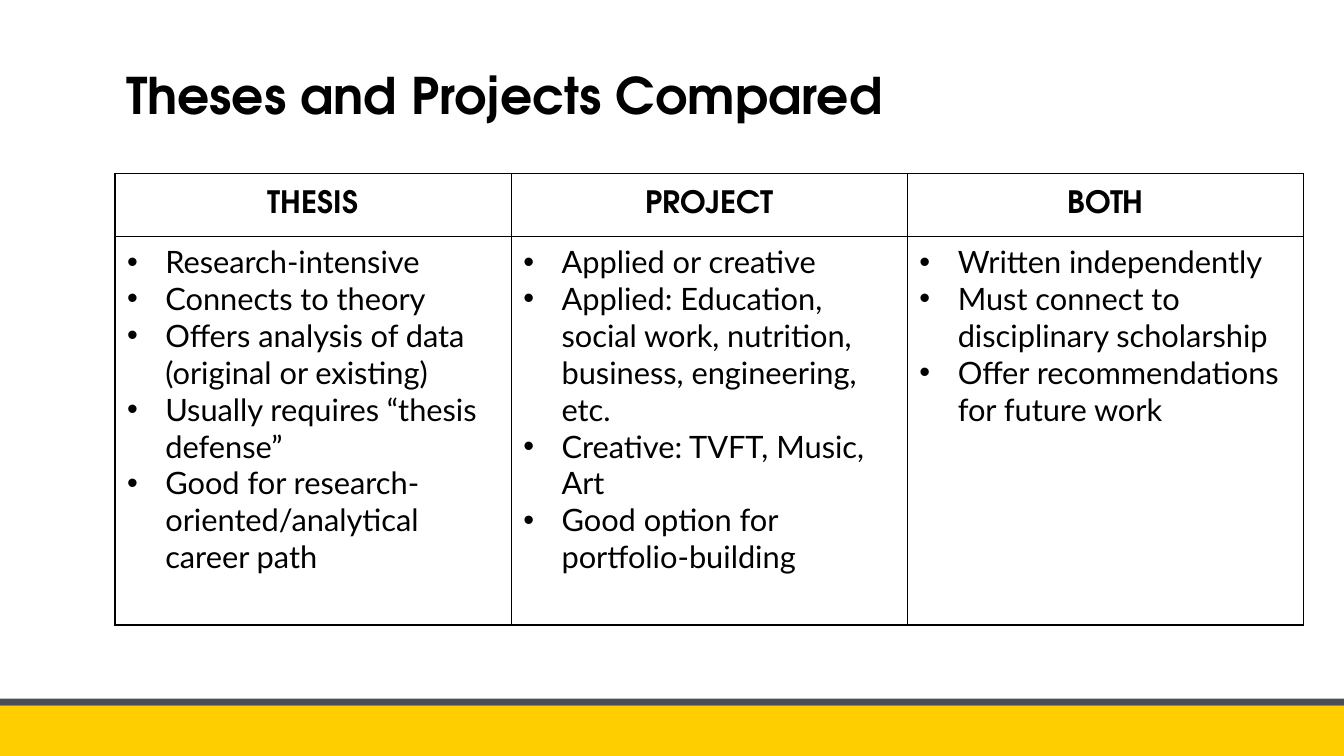
from lxml import etree
from pptx import Presentation
from pptx.dml.color import RGBColor
from pptx.enum.shapes import MSO_SHAPE
from pptx.enum.text import MSO_ANCHOR, PP_ALIGN
from pptx.oxml.ns import qn
from pptx.util import Inches, Pt

RECTANGLE = MSO_SHAPE.RECTANGLE
MIDDLE, TOP = MSO_ANCHOR.MIDDLE, MSO_ANCHOR.TOP
CENTER = PP_ALIGN.CENTER

PAGE_WIDTH, PAGE_HEIGHT = 13.33, 7.5
HEADING_FONT, BODY_FONT = "TeX Gyre Adventor", "Lato"
BLACK, YELLOW, GRAY = "000000", "FFCE00", "4A4F55"
SIDE_INSET, END_INSET = 0.12, 0.06
BULLET_INDENT = 0.38
HEADER_HEIGHT = 0.63

COMPARISON = {
    "THESIS": [
        "Research-intensive",
        "Connects to theory",
        "Offers analysis of data (original or existing)",
        "Usually requires “thesis defense”",
        "Good for research-oriented/analytical career path",
    ],
    "PROJECT": [
        "Applied or creative",
        "Applied: Education, social work, nutrition, business, engineering, etc.",
        "Creative: TVFT, Music, Art",
        "Good option for portfolio-building",
    ],
    "BOTH": [
        "Written independently",
        "Must connect to disciplinary scholarship",
        "Offer recommendations for future work",
    ],
}


def color(hex_value):
    return RGBColor.from_string(hex_value)


def set_insets(holder):
    """Set the margins shared by the title box and the table cells."""
    holder.margin_left = holder.margin_right = Inches(SIDE_INSET)
    holder.margin_top = holder.margin_bottom = Inches(END_INSET)


def style_text(para, font_name, size, bold):
    for span in para.runs:
        span.font.name = font_name
        span.font.size = Pt(size)
        span.font.bold = bold
        span.font.color.rgb = color(BLACK)


def add_bullet(para):
    properties = para._p.get_or_add_pPr()
    properties.set("marL", str(Inches(BULLET_INDENT)))
    properties.set("indent", str(-Inches(BULLET_INDENT)))
    etree.SubElement(properties, qn("a:buFont"), typeface="Arial")
    etree.SubElement(properties, qn("a:buChar"), char="•")


def add_borders(cell):
    properties = cell._tc.get_or_add_tcPr()
    for position, side in enumerate(("lnL", "lnR", "lnT", "lnB")):
        line = etree.Element(qn(f"a:{side}"), w=str(Pt(1)))
        fill = etree.SubElement(line, qn("a:solidFill"))
        etree.SubElement(fill, qn("a:srgbClr"), val=BLACK)
        properties.insert(position, line)


def fill_cell(cell, lines, is_header):
    cell.text_frame.text = "\n".join(lines)
    cell.vertical_anchor = MIDDLE if is_header else TOP
    set_insets(cell)
    cell.fill.background()
    add_borders(cell)
    for para in cell.text_frame.paragraphs:
        if is_header:
            para.alignment = CENTER
        else:
            add_bullet(para)
        style_text(para, HEADING_FONT if is_header else BODY_FONT, 22, is_header)


def add_footer(page, left, top, width, height):
    """Draw a yellow band with a thin gray stripe resting on it."""
    stripe = height / 8
    bands = ((top + stripe, height - stripe, YELLOW), (top, stripe, GRAY))
    for band_top, band_height, band_color in bands:
        band = page.shapes.add_shape(
            RECTANGLE, Inches(left), Inches(band_top), Inches(width), Inches(band_height))
        band.shadow.inherit = False
        band.fill.solid()
        band.fill.fore_color.rgb = color(band_color)
        band.line.fill.background()


def add_title(page, text, left, top, width, height):
    box = page.shapes.add_textbox(Inches(left), Inches(top), Inches(width), Inches(height))
    frame = box.text_frame
    frame.word_wrap = True
    frame.vertical_anchor = MIDDLE
    set_insets(frame)
    frame.text = text
    style_text(frame.paragraphs[0], HEADING_FONT, 36, True)


def add_comparison(page, left, top, width, height):
    table = page.shapes.add_table(
        2, len(COMPARISON), Inches(left), Inches(top), Inches(width), Inches(height)).table
    table.rows[0].height = Inches(HEADER_HEIGHT)
    table.rows[1].height = Inches(height - HEADER_HEIGHT)
    for index, (heading, points) in enumerate(COMPARISON.items()):
        table.columns[index].width = Inches(width / len(COMPARISON))
        fill_cell(table.cell(0, index), [heading], True)
        fill_cell(table.cell(1, index), points, False)


def main():
    deck = Presentation()
    deck.slide_width, deck.slide_height = Inches(PAGE_WIDTH), Inches(PAGE_HEIGHT)
    page = deck.slides.add_slide(deck.slide_layouts[6])
    add_footer(page, 0, 6.93, PAGE_WIDTH, PAGE_HEIGHT - 6.93)
    add_title(page, "Theses and Projects Compared", 1.13, 0.63, 11.32, 0.62)
    add_comparison(page, 1.14, 1.72, 11.79, 4.48)
    deck.save("out.pptx")


if __name__ == "__main__":
    main()
